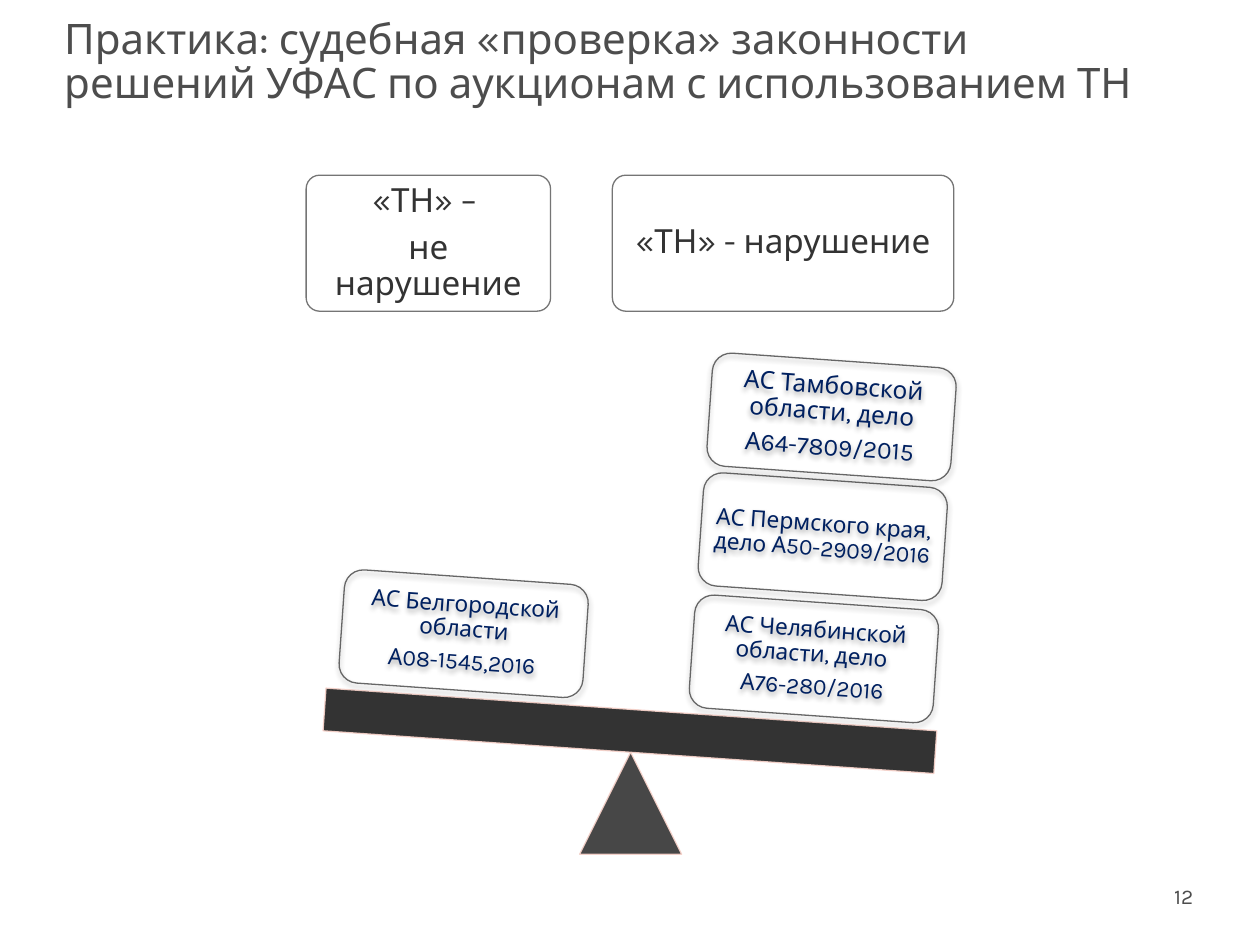
from lxml import etree
from pptx import Presentation
from pptx.dml.color import RGBColor
from pptx.enum.shapes import MSO_SHAPE as Shape
from pptx.enum.text import MSO_ANCHOR as Anchor, MSO_AUTO_SIZE as AutoSize, PP_ALIGN as Align
from pptx.oxml import parse_xml
from pptx.oxml.ns import nsdecls, qn
from pptx.util import Inches, Pt

FONT = "Karla"
DARK, GREY, BORDER = "333333", "4D4D4D", "666666"
NAVY, PEACH = "002060", "F9D4CC"
TILT = 4


def set_color(target, color, alpha=None):
    """Colour a fill or font, with an optional opacity in percent."""
    if hasattr(target, "solid"):
        target.solid()
        target = target.fore_color
        target.rgb = RGBColor.from_string(color)
        if alpha:
            element = target._color._xClr
            etree.SubElement(element, qn("a:alpha"), val=str(alpha * 1000))
    else:
        target.color.rgb = RGBColor.from_string(color)


def write_text(shape, lines, size, color, align=Align.LEFT, inset=0,
               spacing=0.9, after=0):
    frame = shape.text_frame
    frame.word_wrap = True
    frame.auto_size = AutoSize.NONE
    frame.vertical_anchor = Anchor.MIDDLE
    frame.margin_left = frame.margin_right = Inches(inset)
    frame.margin_top = frame.margin_bottom = Inches(inset)
    for index, line in enumerate(lines):
        para = frame.add_paragraph() if index else frame.paragraphs[0]
        para.alignment = align
        para.line_spacing = spacing
        para.space_after = Pt(after)
        span = para.add_run()
        span.text = line
        span.font.name = FONT
        span.font.size = Pt(size)
        set_color(span.font, color)


def add_box(page, kind, left, top, width, height, border, fill=None,
            fill_alpha=None, line_alpha=None, tilt=0):
    box = page.shapes.add_shape(kind, Inches(left), Inches(top),
                                Inches(width), Inches(height))
    box.rotation = tilt
    box.shadow.inherit = False
    if fill:
        set_color(box.fill, fill, fill_alpha)
    else:
        box.fill.background()
    box.line.width = Pt(0.75)
    set_color(box.line.fill, border, line_alpha)
    return box


def add_heading(page, left, width, lines):
    box = add_box(page, Shape.ROUNDED_RECTANGLE, left, 1.39, width, 1.08,
                  BORDER, line_alpha=90)
    box.adjustments[0] = 0.1
    write_text(box, lines, 19, DARK, align=Align.CENTER, inset=0.08, after=6.65)


def add_case(page, left, top, lines, size=13, inset=0.05):
    """A tilted card with a soft shadow, lying on the scale."""
    box = add_box(page, Shape.ROUNDED_RECTANGLE, left, top, 1.94, 0.9,
                  BORDER, tilt=TILT)
    effects = box._element.spPr.find(qn("a:effectLst"))
    effects.append(parse_xml(
        f'<a:outerShdw {nsdecls("a")} blurRad="{Pt(3.1)}" dist="{Pt(1.8)}" '
        'dir="5400000" rotWithShape="0"><a:srgbClr val="000000">'
        '<a:alpha val="35000"/></a:srgbClr></a:outerShdw>'))
    write_text(box, lines, size, NAVY, align=Align.CENTER, inset=inset,
               after=size * 0.35)


def add_title(page, text):
    title = page.shapes.title
    title.left, title.top = Inches(0.51), Inches(0.14)
    title.width, title.height = Inches(8.51), Inches(0.72)
    write_text(title, [text], 24, GREY, spacing=0.88)


def add_page_number(page, number):
    box = page.shapes.add_textbox(Inches(9.12), Inches(6.99),
                                  Inches(0.35), Inches(0.24))
    write_text(box, [number], 12, GREY, align=Align.RIGHT, spacing=1.0)


def main():
    deck = Presentation()
    deck.slide_width, deck.slide_height = Inches(10), Inches(7.5)
    page = deck.slides.add_slide(deck.slide_layouts[5])

    add_title(page, "Практика: судебная «проверка» законности решений УФАС "
                    "по аукционам с использованием ТН")
    add_page_number(page, "12")

    # Headings of the two sides
    add_heading(page, 2.43, 1.94, ["«ТН» – ", "не нарушение"])
    add_heading(page, 4.86, 2.71, ["«ТН» - нарушение"])

    # Scale: support and tilted beam
    add_box(page, Shape.ISOSCELES_TRIANGLE, 4.6, 5.97, 0.81, 0.81, PEACH,
            fill=DARK, fill_alpha=90, line_alpha=90)
    add_box(page, Shape.RECTANGLE, 2.57, 5.63, 4.86, 0.34, PEACH,
            fill=DARK, line_alpha=90, tilt=TILT)

    # Court cases on the right, from the beam up, then on the left
    add_case(page, 5.49, 4.78, ["АС Челябинской области, дело ", "А76-280/2016"])
    add_case(page, 5.56, 3.81, ["АС Пермского края, дело А50-2909/2016"])
    add_case(page, 5.63, 2.86, ["АС Тамбовской области, дело", "А64-7809/2015"],
             size=14, inset=0.06)
    add_case(page, 2.71, 4.58, ["АС Белгородской области", "А08-1545,2016"])

    deck.save("out.pptx")


if __name__ == "__main__":
    main()
